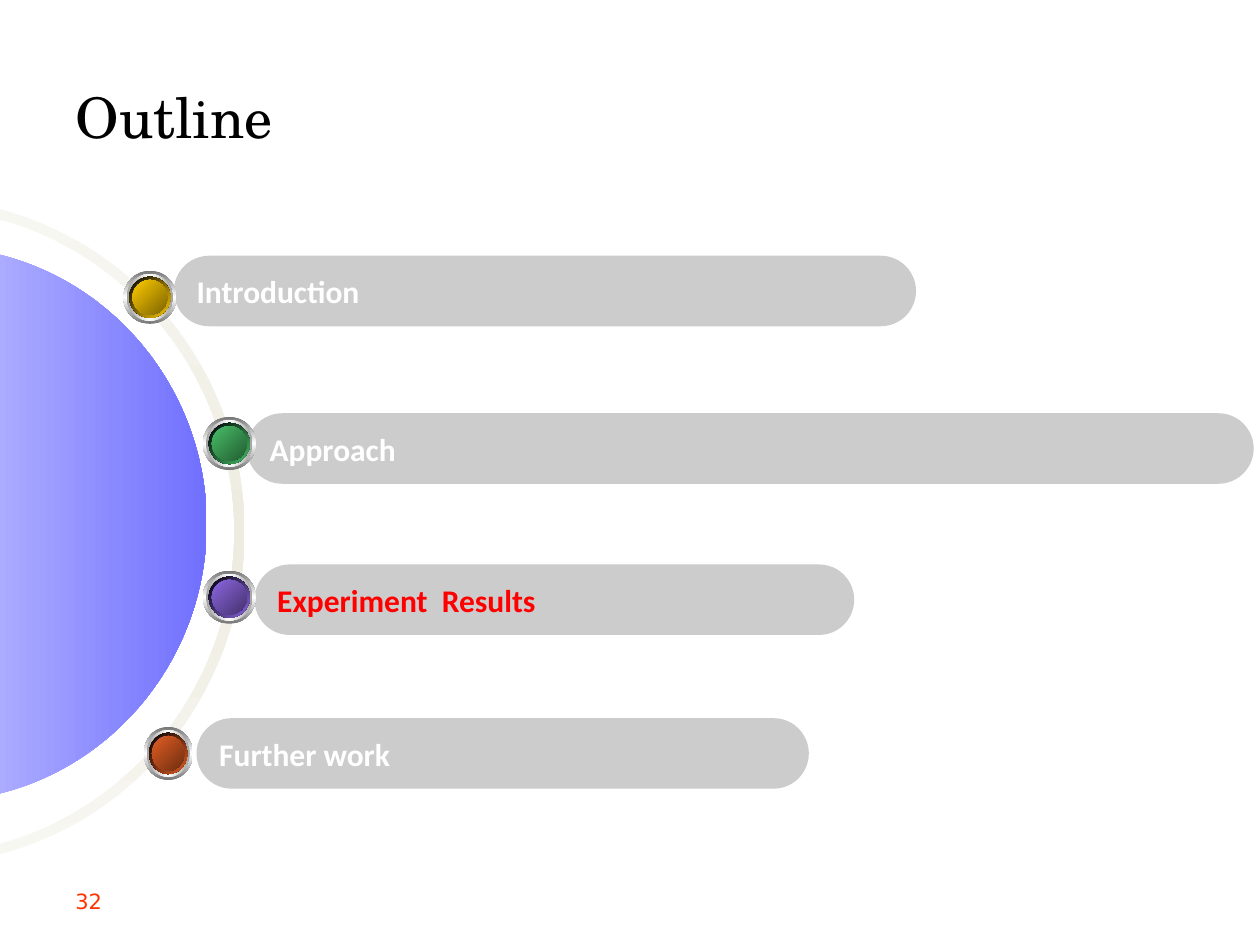
from lxml.etree import SubElement
from pptx import Presentation
from pptx.dml.color import RGBColor
from pptx.enum.shapes import MSO_SHAPE
from pptx.enum.text import MSO_ANCHOR, PP_ALIGN
from pptx.oxml.ns import qn
from pptx.util import Inches, Pt

COLORS = {
    "black": "000000", "white": "FFFFFF", "red": "FF0000", "number": "FF3300",
    "pill": "CCCCCC", "blue": "0000FF", "navy": "37538A",
    "disc_light": "BDBDFF", "disc_dark": "7070FF",
    "ring_end": "F7F7F2", "ring_middle": "EEECE1",
    "rim": "767676", "bevel": "A2A2A2",
    "yellow": "FFCC00", "yellow_dark": "7C6300",
    "green": "48BE67", "green_dark": "235C32",
    "purple": "8D67E1", "purple_dark": "45326D",
    "orange": "E35E23", "orange_dark": "6E2E11",
}

TITLE_FONT = {"name": "TeX Gyre Schola", "size": Pt(32), "bold": False}
NUMBER_FONT = {"name": "DejaVu Sans", "size": Pt(12)}
ITEM_FONT = {"name": "Calibri", "size": Pt(18), "bold": True}

PILL_HEIGHT = 0.56
BALL_HEIGHT = 0.42
CURVE = 0.55  # handle length of a quarter ellipse, as a share of its radius

# text, text colour, pill (left, top, width), ball (left, top, width), ball colour
ITEMS = [
    ("Introduction", "white", (1.38, 2.03, 5.89), (0.98, 2.15, 0.42), "yellow"),
    ("Approach", "white", (1.96, 3.28, 7.99), (1.61, 3.31, 0.42), "green"),
    ("Experiment  Results", "red", (2.02, 4.48, 4.76), (1.61, 4.53, 0.42), "purple"),
    ("Further work", "white", (1.56, 5.7, 4.86), (1.14, 5.77, 0.39), "orange"),
]


def rgb(color):
    return RGBColor.from_string(COLORS[color])


def set_gradient(shape, colors, angle):
    """Fill with evenly spaced colours; the angle runs clockwise in degrees."""
    shape.fill.gradient()
    gradient = shape._element.spPr.find(qn("a:gradFill"))
    stops = gradient.find(qn("a:gsLst"))
    for stop in list(stops):
        stops.remove(stop)
    for index, color in enumerate(colors):
        position = 100000 * index // (len(colors) - 1)
        stop = SubElement(stops, qn("a:gs"), pos=str(position))
        SubElement(stop, qn("a:srgbClr"), val=COLORS[color])
    gradient.find(qn("a:lin")).set("ang", str(angle * 60000))


def make_plain(shape):
    shape.shadow.inherit = False
    shape.line.fill.background()


def write_text(shape, text, font_format, color):
    frame = shape.text_frame
    frame.word_wrap = True
    frame.vertical_anchor = MSO_ANCHOR.MIDDLE
    paragraph = frame.paragraphs[0]
    paragraph.alignment = PP_ALIGN.LEFT
    run = paragraph.add_run()
    run.text = text
    for name, value in font_format.items():
        setattr(run.font, name, value)
    run.font.color.rgb = rgb(color)


def add_title(slide, text):
    title = slide.shapes.title
    title.left, title.top = Inches(0.5), Inches(0.3)
    title.width, title.height = Inches(9), Inches(1.25)
    write_text(title, text, TITLE_FONT, "black")


def add_page_number(slide, text):
    box = slide.shapes.add_textbox(Inches(0.5), Inches(6.95), Inches(2.33), Inches(0.4))
    write_text(box, text, NUMBER_FONT, "number")


def right_arc(center_x, center_y, radius_x, radius_y):
    """Bezier points of the right half of an ellipse, from top to bottom."""
    units = [(0, -1), (CURVE, -1), (1, -CURVE), (1, 0), (1, CURVE), (CURVE, 1), (0, 1)]
    return [(center_x + radius_x * x, center_y + radius_y * y) for x, y in units]


def bend(lines):
    """Turn three line segments into one Bezier curve."""
    first, *others = lines
    first.tag = qn("a:cubicBezTo")
    for line in others:
        first.append(line[0])
        line.getparent().remove(line)


def add_outline(slide, arcs, colors, angle):
    """Join arcs of seven Bezier points by straight edges into one closed shape."""
    points = [(Inches(x), Inches(y)) for arc in arcs for x, y in arc]
    builder = slide.shapes.build_freeform(*points[0])
    builder.add_line_segments(points[1:], close=True)
    shape = builder.convert_to_shape()
    lines = list(shape._element.iter(qn("a:lnTo")))
    for start in range(0, len(lines), 7):
        bend(lines[start:start + 3])
        bend(lines[start + 3:start + 6])
    make_plain(shape)
    set_gradient(shape, colors, angle)


def add_pill(slide, left, top, width, text, color):
    pill = slide.shapes.add_shape(
        MSO_SHAPE.ROUNDED_RECTANGLE,
        Inches(left), Inches(top), Inches(width), Inches(PILL_HEIGHT))
    pill.adjustments[0] = 0.5
    make_plain(pill)
    pill.fill.solid()
    pill.fill.fore_color.rgb = rgb("pill")
    write_text(pill, text, ITEM_FONT, color)


def add_ball(slide, left, top, width, color):
    """Stack ellipses, each inset by a share of the ball's size."""
    layers = [
        (0, ("rim", "white", "rim"), 90),
        (0.06, ("bevel", "white", "bevel"), 0),
        (0.11, ("white", "blue", "white"), 45),
        (0.11, ("black", color), 45),
        (0.17, ("navy", "blue", "navy"), 315),
        (0.17, (color, color + "_dark"), 45),
    ]
    group = slide.shapes.add_group_shape()
    for inset, colors, angle in layers:
        scale = 1 - 2 * inset
        ellipse = group.shapes.add_shape(
            MSO_SHAPE.OVAL,
            Inches(left + inset * width), Inches(top + inset * BALL_HEIGHT),
            Inches(scale * width), Inches(scale * BALL_HEIGHT))
        make_plain(ellipse)
        set_gradient(ellipse, colors, angle)


def main():
    presentation = Presentation()
    presentation.slide_width, presentation.slide_height = Inches(10), Inches(7.5)
    slide = presentation.slides.add_slide(presentation.slide_layouts[5])

    add_page_number(slide, "32")
    add_title(slide, "Outline")

    outer_arc = right_arc(-0.63, 4.22, 2.57, 2.64)
    inner_arc = right_arc(-0.63, 4.22, 2.49, 2.56)
    add_outline(slide, [outer_arc, inner_arc[::-1]],
                ("ring_end", "ring_middle", "ring_end"), 90)
    disc_arc = right_arc(-0.51, 4.16, 2.15, 2.2)
    add_outline(slide, [disc_arc], ("disc_light", "disc_dark"), 0)

    for text, text_color, pill, _, _ in ITEMS:
        add_pill(slide, *pill, text, text_color)
    for _, _, _, ball, ball_color in ITEMS:
        add_ball(slide, *ball, ball_color)

    presentation.save("out.pptx")


if __name__ == "__main__":
    main()
